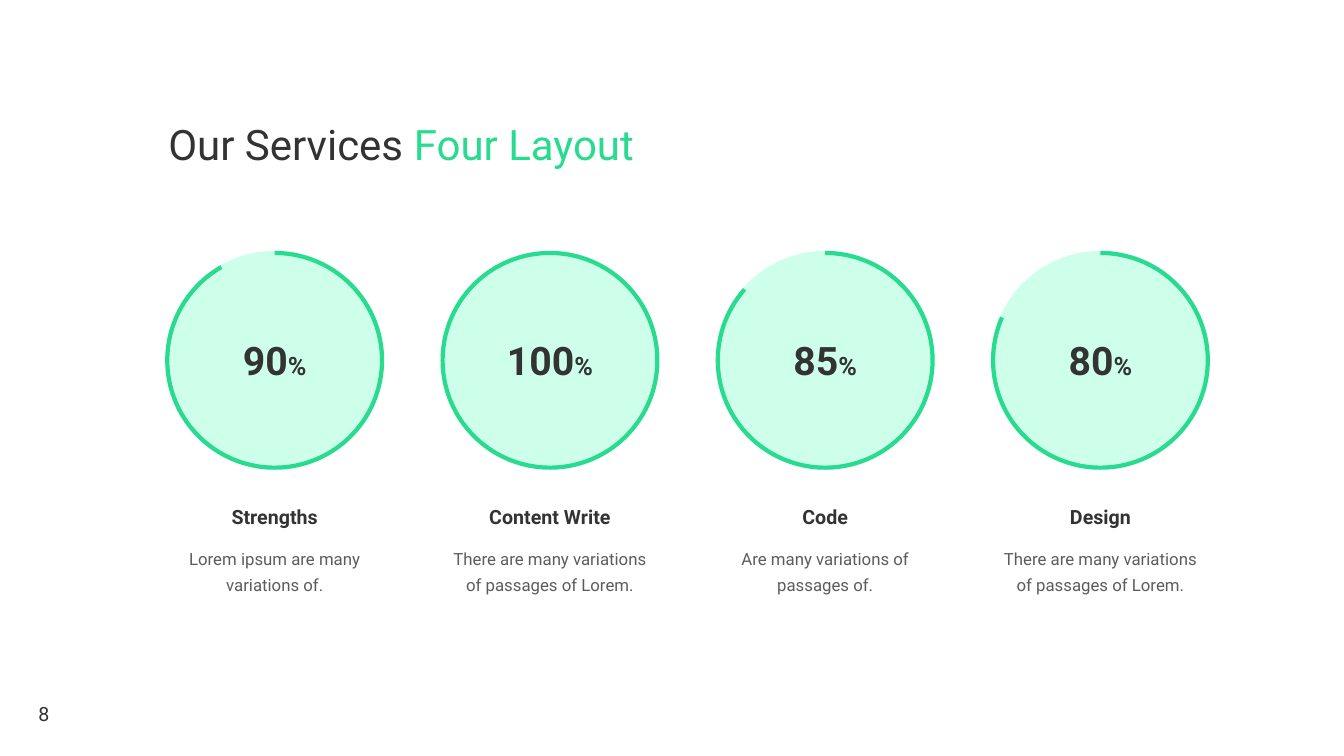
from pptx import Presentation
from pptx.dml.color import RGBColor
from pptx.enum.shapes import MSO_SHAPE
from pptx.enum.text import MSO_ANCHOR, MSO_AUTO_SIZE, PP_ALIGN
from pptx.oxml.ns import qn
from pptx.util import Inches, Pt
from lxml import etree

DARK, GREEN, MINT = "333333", "28DB8F", "CEFFEA"


def rgb(value):
    return RGBColor.from_string(value)


def add_run(p, text, size, color=DARK, bold=False):
    r = p.add_run()
    r.text = text
    for name, value in {"name": "Roboto", "size": Pt(size), "bold": bold}.items():
        setattr(r.font, name, value)
    r.font.color.rgb = rgb(color)
    return r


prs = Presentation()
prs.slide_width, prs.slide_height = Inches(13.33), Inches(7.5)
s = prs.slides.add_slide(prs.slide_layouts[5])

# Title
title = s.shapes.title
title.left, title.top = Inches(1.67), Inches(1.13)
title.width, title.height = Inches(10.83), Inches(0.81)
tf = title.text_frame
frame_format = {"margin_left": 0, "margin_right": 0,
                "margin_top": Inches(0.1), "margin_bottom": Inches(0.1),
                "vertical_anchor": MSO_ANCHOR.TOP,
                "auto_size": MSO_AUTO_SIZE.NONE, "word_wrap": True}
for name, value in frame_format.items():
    setattr(tf, name, value)
p = tf.paragraphs[0]
p.alignment, p.line_spacing = PP_ALIGN.LEFT, 0.9
add_run(p, "Our Services", 30)
add_run(p, " Four Layout", 30, GREEN)

# Page number
sp = s.shapes.add_textbox(Inches(0.14), Inches(6.88), Inches(0.59), Inches(0.4))
tf = sp.text_frame
tf.word_wrap, tf.vertical_anchor = True, MSO_ANCHOR.MIDDLE
p = tf.paragraphs[0]
p.alignment = PP_ALIGN.CENTER
add_run(p, "8", 14)

# Services: percent, arc end (None for a full ring), name, description
services = [
    ("90", 144.15, "Strengths", "Lorem ipsum are many variations of."),
    ("100", None, "Content Write", "There are many variations of passages of Lorem."),
    ("85", 132.83, "Code", "Are many variations of passages of."),
    ("80", 122.14, "Design", "There are many variations of passages of Lorem."),
]
LEFT, PITCH, DIAMETER = 1.66, 2.73, 2.13

for i, (percent, arc_end, name, description) in enumerate(services):
    x = LEFT + i * PITCH
    ring_box = Inches(x), Inches(2.51), Inches(DIAMETER), Inches(DIAMETER)

    # Disc with its percentage
    disc = s.shapes.add_shape(MSO_SHAPE.OVAL, *ring_box)
    disc.shadow.inherit = False
    disc.fill.solid()
    disc.fill.fore_color.rgb = rgb(MINT)
    disc.line.color.rgb = rgb(MINT if arc_end else GREEN)
    disc.line.width = Pt(3)
    tf = disc.text_frame
    tf.vertical_anchor = MSO_ANCHOR.MIDDLE
    p = tf.paragraphs[0]
    p.alignment = PP_ALIGN.CENTER
    add_run(p, percent, 28, bold=True)
    add_run(p, "%", 18, bold=True)

    # Progress arc, clockwise from the top
    if arc_end:
        arc = s.shapes.add_shape(MSO_SHAPE.ARC, *ring_box)
        arc.shadow.inherit = False
        arc.adjustments[0], arc.adjustments[1] = 162, arc_end
        arc.fill.background()
        arc.line.color.rgb = rgb(GREEN)
        arc.line.width = Pt(3)

    # Name and description
    sp = s.shapes.add_textbox(Inches(x + 0.08), Inches(4.94), Inches(1.97), Inches(1.01))
    tf = sp.text_frame
    tf.word_wrap = True
    for side in ("left", "right", "top", "bottom"):
        setattr(tf, f"margin_{side}", 0)
    heading, body = tf.paragraphs[0], tf.add_paragraph()
    for p in (heading, body):
        p.alignment, p.line_spacing = PP_ALIGN.CENTER, 1.3
    body.space_before = Pt(10)
    add_run(heading, name, 14, bold=True)
    r = add_run(body, description, 12)
    # Description text is 80% opaque
    color = r.font.fill._xPr.find(qn("a:solidFill"))[0]
    etree.SubElement(color, qn("a:alpha")).set("val", "80000")

prs.save("out.pptx")
